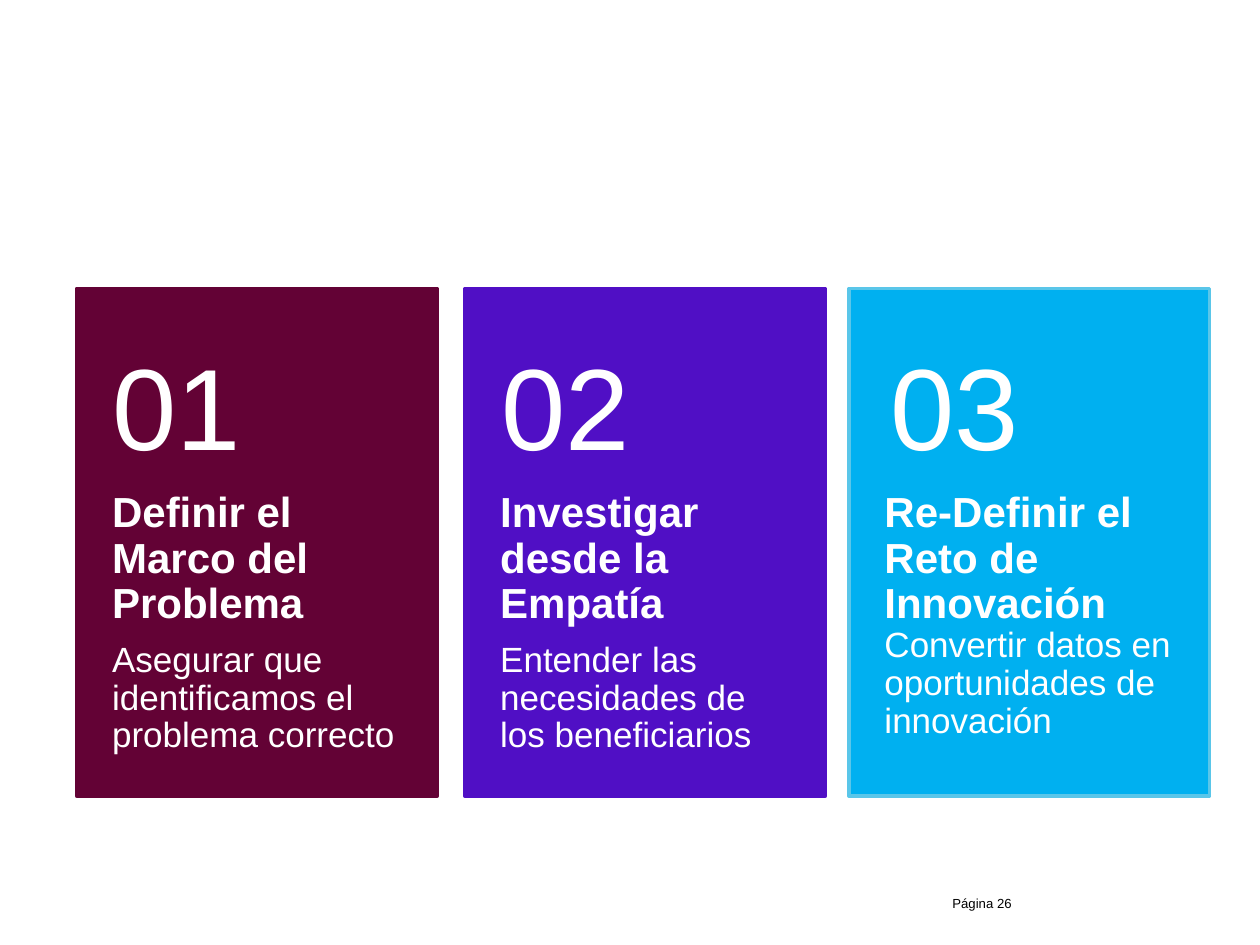
from dataclasses import dataclass

import pptx
import pptx.dml.color
import pptx.enum.shapes
import pptx.enum.text
import pptx.util
from pptx.util import Inches, Pt


@dataclass(frozen=True)
class Theme:
    font: str = "Arial"
    text: str = "FFFFFF"
    footer_text: str = "000000"
    number_size: float = 66
    heading_size: float = 24
    body_size: float = 20
    footer_size: float = 7.5
    line_spacing: float = 0.9


@dataclass(frozen=True)
class Card:
    left: float
    number_left: float
    number: str
    heading: str
    body: str
    fill: str
    line: str
    heading_gap: float = 8.4


THEME = Theme()
CARD_TOP, CARD_WIDTH, CARD_HEIGHT = 2.29, 2.86, 4.03
NUMBER_TOP, NUMBER_HEIGHT = 2.59, 1.37
TEXT_TOP = 3.9
SIDE_INSET = 0.28

CARDS = [
    Card(0.61, 0.61, "01", "Definir el Marco del Problema",
         "Asegurar que identificamos el problema correcto", "630235", "630235"),
    Card(3.69, 3.7, "02", "Investigar desde la Empatía",
         "Entender las necesidades de los beneficiarios", "500FC5", "500FC5"),
    Card(6.74, 6.79, "03", "Re-Definir el Reto de Innovación",
         "Convertir datos en oportunidades de innovación", "00B0F0", "5AC6E9",
         heading_gap=0),
]


def rgb(value: str) -> pptx.dml.color.RGBColor:
    return pptx.dml.color.RGBColor.from_string(value)


def add_text_frame(slide: pptx.slide.Slide, left: float, top: float, width: float,
                   height: float, insets: tuple[float, float, float, float]
                   ) -> pptx.text.text.TextFrame:
    """Add a wrapping text box; insets are left, top, right, bottom in inches."""
    box = slide.shapes.add_textbox(Inches(left), Inches(top), Inches(width), Inches(height))
    frame = box.text_frame
    frame.word_wrap = True
    frame.margin_left, frame.margin_top, frame.margin_right, frame.margin_bottom = map(
        Inches, insets)
    return frame


def write_paragraph(paragraph: pptx.text.text._Paragraph, text: str, size: float,
                    color: str = THEME.text, bold: bool = False,
                    line_spacing: float = THEME.line_spacing, space_after: float = 0) -> None:
    paragraph.text = text
    paragraph.line_spacing = line_spacing
    paragraph.space_after = Pt(space_after)
    paragraph.font.name = THEME.font
    paragraph.font.size = Pt(size)
    paragraph.font.bold = bold
    paragraph.font.color.rgb = rgb(color)


def draw_card(slide: pptx.slide.Slide, card: Card) -> None:
    panel = slide.shapes.add_shape(
        pptx.enum.shapes.MSO_SHAPE.RECTANGLE, Inches(card.left), Inches(CARD_TOP),
        Inches(CARD_WIDTH), Inches(CARD_HEIGHT))
    panel.shadow.inherit = False
    panel.fill.solid()
    panel.fill.fore_color.rgb = rgb(card.fill)
    panel.line.color.rgb = rgb(card.line)
    panel.line.width = Pt(2)

    description = add_text_frame(
        slide, card.left, TEXT_TOP, CARD_WIDTH, CARD_TOP + CARD_HEIGHT - TEXT_TOP,
        (SIDE_INSET, 0, SIDE_INSET, 0.36))
    write_paragraph(description.paragraphs[0], card.heading, THEME.heading_size,
                    bold=True, space_after=card.heading_gap)
    write_paragraph(description.add_paragraph(), card.body, THEME.body_size)

    number = add_text_frame(slide, card.number_left, NUMBER_TOP, CARD_WIDTH, NUMBER_HEIGHT,
                            (SIDE_INSET, 0.18, SIDE_INSET, 0.18))
    number.vertical_anchor = pptx.enum.text.MSO_ANCHOR.MIDDLE
    write_paragraph(number.paragraphs[0], card.number, THEME.number_size)


def main() -> None:
    presentation = pptx.Presentation()
    presentation.slide_width, presentation.slide_height = Inches(10), Inches(7.5)
    blank_layout = presentation.slide_layouts[6]
    slide = presentation.slides.add_slide(blank_layout)

    footer = add_text_frame(slide, 7.46, 7.06, 1.34, 0.18, (0.1, 0.05, 0.1, 0.05))
    write_paragraph(footer.paragraphs[0], "Página 26", THEME.footer_size,
                    color=THEME.footer_text, line_spacing=1.0)
    for card in CARDS:
        draw_card(slide, card)

    presentation.save("out.pptx")


if __name__ == "__main__":
    main()
